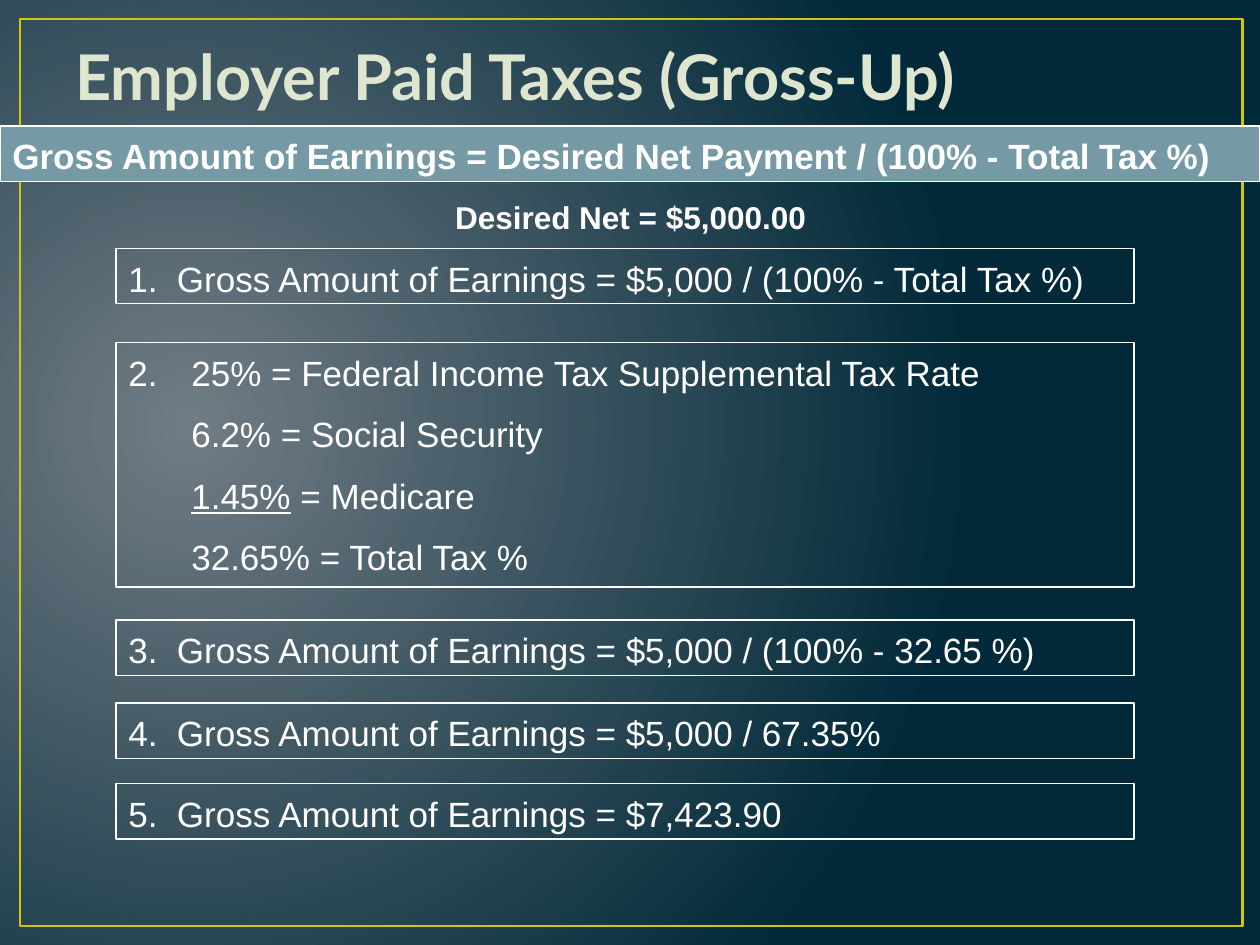
from dataclasses import dataclass

from lxml.etree import SubElement
from pptx import Presentation
from pptx.dml.color import RGBColor as Color
from pptx.enum.shapes import MSO_SHAPE as Preset
from pptx.enum.text import MSO_ANCHOR as Anchor, PP_ALIGN as Align
from pptx.oxml.ns import qn
from pptx.shapes.autoshape import Shape
from pptx.slide import Slide
from pptx.text.text import TextFrame
from pptx.util import Inches, Pt


@dataclass(frozen=True)
class Theme:
    glow: Color = Color.from_string("717C84")
    night: Color = Color.from_string("01293A")
    frame: Color = Color.from_string("CFC60D")
    title: Color = Color.from_string("DFE6D0")
    banner: Color = Color.from_string("759AA5")
    white: Color = Color.from_string("FFFFFF")
    title_font: str = "Lato"
    body_font: str = "Arial"
    title_size: int = 36
    body_size: int = 20
    note_size: int = 18
    line_gap: int = 11


@dataclass(frozen=True)
class Style:
    size: int
    color: Color
    font: str
    bold: bool = False
    align: Align = Align.LEFT


@dataclass(frozen=True)
class Box:
    left: float
    top: float
    width: float
    height: float

    def lengths(self) -> tuple:
        return tuple(map(Inches, (self.left, self.top, self.width, self.height)))


@dataclass(frozen=True)
class Step:
    top: float
    height: float
    lines: tuple[str, ...]


THEME = Theme()
TITLE = Style(THEME.title_size, THEME.title, THEME.title_font, bold=True)
BODY = Style(THEME.body_size, THEME.white, THEME.body_font)
BANNER = Style(THEME.body_size, THEME.white, THEME.body_font, bold=True)
NOTE = Style(THEME.note_size, THEME.white, THEME.body_font, True, Align.CENTER)

STEP_LEFT, STEP_WIDTH, ROW_HEIGHT = 0.92, 8.08, 0.44
EARNINGS = "Gross Amount of Earnings = "
# Text between underscores is underlined
STEPS = (
    Step(1.97, ROW_HEIGHT, (f"1.  {EARNINGS}$5,000 / (100% - Total Tax %)",)),
    Step(2.72, 1.94, (
        "2.  \t25% = Federal Income Tax Supplemental Tax Rate",
        "\t6.2% = Social Security",
        "\t_1.45%_ = Medicare",
        "\t32.65% = Total Tax %",
    )),
    Step(4.92, ROW_HEIGHT, (f"3.  {EARNINGS}$5,000 / (100% - 32.65 %)",)),
    Step(5.58, ROW_HEIGHT, (f"4.  {EARNINGS}$5,000 / 67.35%",)),
    Step(6.22, ROW_HEIGHT, (f"5.  {EARNINGS}$7,423.90",)),
)


def paint_background(slide: Slide) -> None:
    """Circular gradient glowing from the left side."""
    fill = slide.background.fill
    fill.gradient()
    for stop, color in zip(fill.gradient_stops, (THEME.glow, THEME.night)):
        stop.color.rgb = color
    gradient = slide.element.find(".//" + qn("a:gradFill"))
    gradient.remove(gradient.find(qn("a:lin")))
    circle = SubElement(gradient, qn("a:path"), path="circle")
    SubElement(circle, qn("a:fillToRect"), l="15000", t="50000", r="85000", b="60000")


def write(frame: TextFrame, lines: tuple[str, ...], style: Style, top_inset: float = 0.07) -> None:
    frame.word_wrap = True
    frame.vertical_anchor = Anchor.TOP
    frame.margin_top = Inches(top_inset)
    for index, line in enumerate(lines):
        paragraph = frame.add_paragraph() if index else frame.paragraphs[0]
        paragraph.alignment = style.align
        paragraph.space_before = Pt(THEME.line_gap if index else 0)
        font = paragraph.font
        font.name, font.size, font.bold = style.font, Pt(style.size), style.bold
        font.color.rgb = style.color
        for part, text in enumerate(line.split("_")):
            run = paragraph.add_run()
            run.text = text
            if part % 2:
                run.font.underline = True


def add_box(slide: Slide, box: Box, line: Color, weight: float, fill: Color | None = None) -> Shape:
    shape = slide.shapes.add_shape(Preset.RECTANGLE, *box.lengths())
    shape.shadow.inherit = False
    shape.line.color.rgb = line
    shape.line.width = Pt(weight)
    if fill is None:
        shape.fill.background()
    else:
        shape.fill.solid()
        shape.fill.fore_color.rgb = fill
    return shape


def add_label(slide: Slide, box: Box, text: str, style: Style, top_inset: float) -> None:
    label = slide.shapes.add_textbox(*box.lengths())
    write(label.text_frame, (text,), style, top_inset)


def main() -> None:
    presentation = Presentation()
    presentation.slide_width, presentation.slide_height = Inches(10), Inches(7.5)
    slide = presentation.slides.add_slide(presentation.slide_layouts[6])

    # Background, frame and title
    paint_background(slide)
    add_box(slide, Box(0.16, 0.15, 9.7, 7.2), THEME.frame, 1.5)
    add_label(slide, Box(0.5, 0.25, 9, 0.75), "Employer Paid Taxes (Gross-Up)", TITLE, 0.05)

    # Formula banner and the desired net
    banner = add_box(slide, Box(0, 1, 10, ROW_HEIGHT), THEME.white, 0.75, THEME.banner)
    write(banner.text_frame, (f"{EARNINGS}Desired Net Payment / (100% - Total Tax %)",), BANNER)
    add_label(slide, Box(1.42, 1.5, 7.17, 0.4), "Desired Net = $5,000.00", NOTE, 0.07)

    # Calculation steps
    for step in STEPS:
        shape = add_box(slide, Box(STEP_LEFT, step.top, STEP_WIDTH, step.height), THEME.white, 0.75)
        write(shape.text_frame, step.lines, BODY)

    presentation.save("out.pptx")


if __name__ == "__main__":
    main()
